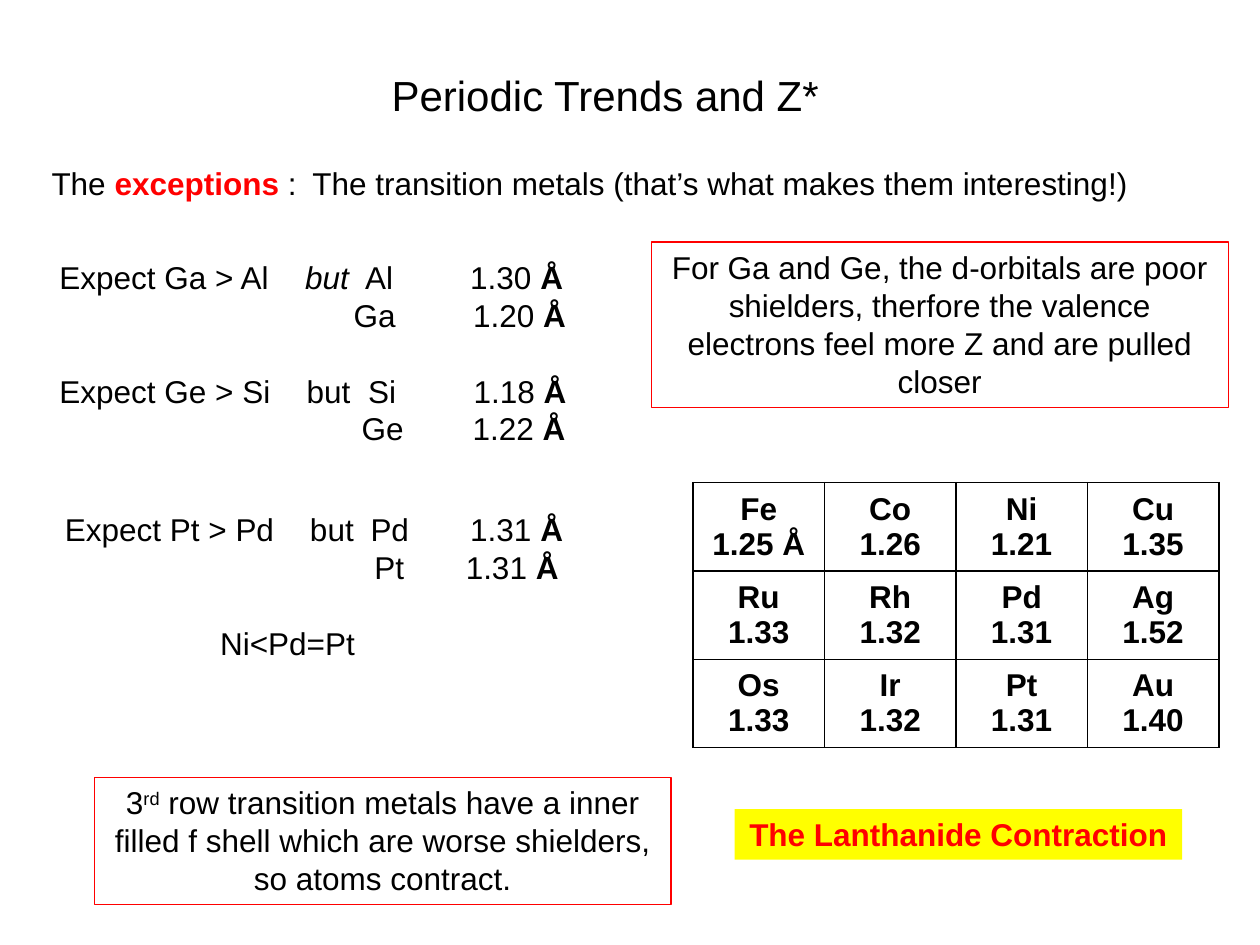
from dataclasses import dataclass

from lxml import etree
from pptx import Presentation
from pptx.dml.color import RGBColor
from pptx.enum.shapes import MSO_SHAPE
from pptx.enum.text import MSO_ANCHOR, PP_ALIGN
from pptx.oxml.ns import qn
from pptx.util import Cm, Pt

LEFT, MID = PP_ALIGN.LEFT, PP_ALIGN.CENTER
TOP, CENTER = MSO_ANCHOR.TOP, MSO_ANCHOR.MIDDLE
RECT = MSO_SHAPE.RECTANGLE
COLORS = {"black": "000000", "red": "FF0000", "yellow": "FFFF00", "white": "FFFFFF"}
FONT = "Arial"
BODY = 18
PITCH = 1.2  # line height over font size
INSET = 0.25


@dataclass
class Run:
    text: str
    bold: bool = False
    italic: bool = False
    color: str = "black"
    sup: bool = False


@dataclass
class Line:
    runs: list[Run]
    align: PP_ALIGN = MID
    stops: tuple[float, ...] = ()  # tab stops in cm from the slide's left edge
    gap: float = 0  # space before, in points


@dataclass
class Box:
    x: float
    y: float
    w: float
    h: float
    lines: list[Line]
    size: int = BODY
    wrap: bool = True
    frame: bool = False  # drawn as a rectangle
    fill: str = ""
    edge: str = ""


def rgb(name: str) -> RGBColor:
    return RGBColor.from_string(COLORS[name])


def add_run(para, part: Run, size: int) -> None:
    run = para.add_run()
    run.text = part.text
    font = run.font
    font.name, font.size = FONT, Pt(size)
    font.bold, font.italic = part.bold, part.italic
    font.color.rgb = rgb(part.color)
    if part.sup:
        run._r.get_or_add_rPr().set("baseline", "30000")


def add_line(para, line: Line, size: int, left: float) -> None:
    if line.stops:
        tabs = etree.SubElement(para._p.get_or_add_pPr(), qn("a:tabLst"))
        for stop in line.stops:
            etree.SubElement(tabs, qn("a:tab"), pos=str(Cm(stop - left)), algn="l")
    para.alignment = line.align
    para.line_spacing = Pt(size * PITCH)
    if line.gap:
        para.space_before = Pt(line.gap)
    for part in line.runs:
        add_run(para, part, size)


def draw_box(slide, box: Box) -> None:
    area = Cm(box.x), Cm(box.y), Cm(box.w), Cm(box.h)
    if box.frame:
        shape = slide.shapes.add_shape(RECT, *area)
        shape.shadow.inherit = False
        if box.fill:
            shape.fill.solid()
            shape.fill.fore_color.rgb = rgb(box.fill)
        else:
            shape.fill.background()
        if box.edge:
            shape.line.color.rgb = rgb(box.edge)
            shape.line.width = Pt(0.75)
        else:
            shape.line.fill.background()
    else:
        shape = slide.shapes.add_textbox(*area)
    frame = shape.text_frame
    frame.word_wrap = box.wrap
    frame.vertical_anchor = TOP
    for i, line in enumerate(box.lines):
        para = frame.add_paragraph() if i else frame.paragraphs[0]
        add_line(para, line, box.size, box.x + INSET)


def radius(text: str, stops: tuple[float, ...], gap: float = 0) -> Line:
    """One tabbed line that ends in a radius."""
    head, word, tail = text.partition("but*")
    runs = [Run(head), Run("but", italic=True), Run(tail)] if word else [Run(text)]
    return Line([*runs, Run(" Å", bold=True)], LEFT, stops, gap)


def edge_cell(cell) -> None:
    props = cell._tc.get_or_add_tcPr()
    for i, side in enumerate(("lnL", "lnR", "lnT", "lnB")):
        line = etree.Element(qn(f"a:{side}"), w=str(Pt(1)))
        fill = etree.SubElement(line, qn("a:solidFill"))
        etree.SubElement(fill, qn("a:srgbClr"), val=COLORS["black"])
        props.insert(i, line)


def draw_table(slide, rows: list[list[tuple[str, str]]]) -> None:
    area = Cm(13.97), Cm(9.73), Cm(10.6), Cm(5.34)
    table = slide.shapes.add_table(len(rows), len(rows[0]), *area).table
    table.first_row = table.horz_banding = False
    for r, row in enumerate(rows):
        for c, texts in enumerate(row):
            cell = table.cell(r, c)
            cell.fill.solid()
            cell.fill.fore_color.rgb = rgb("white")
            cell.vertical_anchor = CENTER
            edge_cell(cell)
            frame = cell.text_frame
            for i, text in enumerate(texts):
                para = frame.add_paragraph() if i else frame.paragraphs[0]
                para.alignment = MID
                add_run(para, Run(text, bold=True), BODY)


GAP = BODY * PITCH
BOXES = [
    # Title and lead
    Box(7.59, 1.27, 9.22, 1.27, [Line([Run("Periodic Trends and Z*")])], 24, False),
    Box(0.79, 3.18, 22.43, 1.8, [Line([
        Run("The "), Run("exceptions", bold=True, color="red"),
        Run(" :\tThe transition metals (that’s what makes them interesting!)"),
    ], LEFT, (6.3,))]),
    # Why gallium and germanium differ
    Box(13.13, 4.88, 11.63, 3.33, [Line([Run(
        "For Ga and Ge, the d-orbitals are poor shielders, therfore the "
        "valence electrons feel more Z and are pulled closer")])],
        frame=True, edge="red"),
    # Main group radii
    Box(-0.05, 5.08, 12.75, 4.88, [
        radius("\tExpect Ga > Al\tbut*\tAl\t1.30", (1.2, 6.15, 7.36, 9.48)),
        radius("\tGa\t1.20", (7.13, 9.54)),
        radius("\tExpect Ge > Si\tbut\tSi\t1.18", (1.2, 6.18, 7.42, 9.55), GAP),
        radius("\tGe\t1.22", (7.29, 9.53)),
    ]),
    # Transition metal radii
    Box(-0.3, 10.16, 12.37, 3.33, [
        radius("\tExpect Pt > Pd\tbut\tPd\t1.31", (1.31, 6.25, 7.47, 9.48)),
        radius("\tPt\t1.31", (7.55, 9.39)),
        Line([Run("Ni<Pd=Pt ")], gap=GAP),
    ]),
    # Conclusions
    Box(1.9, 15.67, 11.63, 2.57, [Line([
        Run("3"), Run("rd", sup=True),
        Run(" row transition metals have a inner filled f shell which are "
            "worse shielders, so atoms contract."),
    ])], frame=True, edge="red"),
    Box(14.81, 16.31, 9.02, 1.02, [Line([
        Run("The Lanthanide Contraction", bold=True, color="red")])],
        wrap=False, frame=True, fill="yellow"),
]
METALS = [
    [("Fe", "1.25 Å"), ("Co", "1.26"), ("Ni", "1.21"), ("Cu", "1.35")],
    [("Ru", "1.33"), ("Rh", "1.32"), ("Pd", "1.31"), ("Ag", "1.52")],
    [("Os", "1.33"), ("Ir", "1.32"), ("Pt", "1.31"), ("Au", "1.40")],
]


def main() -> None:
    deck = Presentation()
    deck.slide_width, deck.slide_height = Cm(25.4), Cm(19.05)
    slide = deck.slides.add_slide(deck.slide_layouts[6])
    for box in BOXES:
        draw_box(slide, box)
    draw_table(slide, METALS)
    deck.save("out.pptx")


if __name__ == "__main__":
    main()
